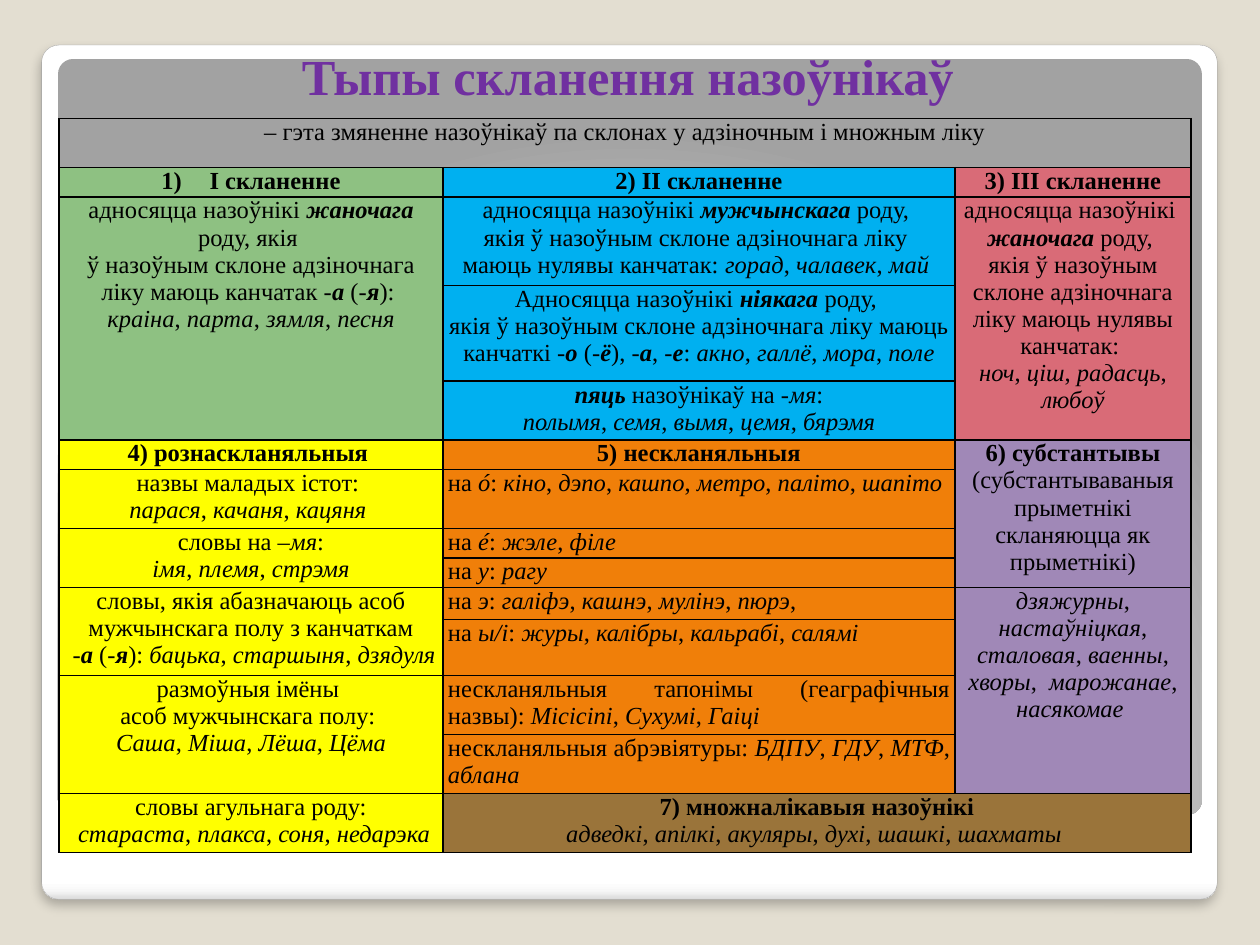
from dataclasses import dataclass
from itertools import groupby
from typing import Iterator, Optional

from lxml.etree import SubElement
from pptx import Presentation
from pptx.dml.color import RGBColor
from pptx.enum.shapes import MSO_SHAPE
from pptx.enum.text import PP_ALIGN
from pptx.oxml import parse_xml
from pptx.oxml.ns import nsdecls, qn
from pptx.util import Cm, Pt

FONT = "Times New Roman"
BLACK = RGBColor(0x00, 0x00, 0x00)
PURPLE = RGBColor(0x70, 0x30, 0xA0)
BEIGE = RGBColor(0xE3, 0xDE, 0xD1)
EDGE = RGBColor(0xA4, 0xA4, 0xA4)
GREEN = RGBColor(0x8E, 0xC1, 0x82)
BLUE = RGBColor(0x00, 0xB0, 0xF0)
RED = RGBColor(0xD9, 0x6B, 0x77)
YELLOW = RGBColor(0xFF, 0xFF, 0x00)
ORANGE = RGBColor(0xF0, 0x7F, 0x09)
VIOLET = RGBColor(0xA0, 0x88, 0xB7)
BROWN = RGBColor(0x9A, 0x74, 0x3A)

HANGING = Cm(0.97)
COLUMN_WIDTHS = (7.74, 10.32, 4.76)
ROW_HEIGHTS = (0.99, 0.54, 1.64, 1.93, 1.09, 0.54, 1.09, 0.54, 0.54,
               0.65, 0.99, 1.09, 1.09, 1.1)


@dataclass(frozen=True)
class Entry:
    """A table cell: in its lines * toggles bold, _ italic, # opens a heading and 1) numbers it."""
    row: int
    column: int
    fill: Optional[RGBColor]
    lines: tuple[str, ...]
    rows: int = 1
    columns: int = 1
    align: PP_ALIGN = PP_ALIGN.CENTER


@dataclass(frozen=True)
class Panel:
    """A rounded background panel with its gradient stops and direction."""
    left: float
    top: float
    width: float
    height: float
    stops: tuple[tuple[int, str], ...]
    direction: str


PANELS = (
    Panel(0.84, 0.91, 23.7, 17.22,
          ((0, "FFFFFF"), (98, "FFFFFF"), (99, "F7F7F7"), (100, "DADADA")),
          '<a:lin ang="5400000" scaled="0"/>'),
    Panel(1.17, 1.19, 23.06, 15.24,
          ((0, "FFFFFF"), (55, "E1E1E1"), (100, "A2A2A2")),
          '<a:path path="circle"><a:fillToRect l="50000" t="175000" r="50000" b="-75000"/></a:path>'),
)

ENTRIES = (
    Entry(0, 0, None, ("– гэта змяненне назоўнікаў па склонах у адзіночным і множным ліку",), columns=3),
    Entry(1, 0, GREEN, ("#1)І скланенне",)),
    Entry(1, 1, BLUE, ("#2) ІІ скланенне",)),
    Entry(1, 2, RED, ("#3) ІІІ скланенне",)),
    Entry(2, 0, GREEN, ("адносяцца назоўнікі *_жаночага_* роду, якія ",
                        "ў назоўным склоне адзіночнага ліку маюць канчатак -*_а_* (-*_я_*): ",
                        "_краіна, парта, зямля, песня_"), rows=3),
    Entry(2, 1, BLUE, ("адносяцца назоўнікі *_мужчынскага_* роду, ",
                       "якія ў назоўным склоне адзіночнага ліку ",
                       "маюць нулявы канчатак: _горад, чалавек, май _")),
    Entry(2, 2, RED, ("адносяцца назоўнікі ", "*_жаночага_* роду, ",
                      "якія ў назоўным склоне адзіночнага ліку маюць нулявы канчатак: ",
                      "_ноч, ціш, радасць, любоў_"), rows=3),
    Entry(3, 1, BLUE, ("Адносяцца назоўнікі *_ніякага_* роду, ",
                       "якія ў назоўным склоне адзіночнага ліку маюць канчаткі "
                       "-*_о_* (-*_ё_*), -*_а_*, -*_е_*: _акно, галлё, мора, поле_")),
    Entry(4, 1, BLUE, ("*_пяць_* назоўнікаў на -_мя_:", "_полымя, семя, вымя, цемя, бярэмя_")),
    Entry(5, 0, YELLOW, ("#4) рознаскланяльныя ",)),
    Entry(5, 1, ORANGE, ("#5) нескланяльныя",)),
    Entry(5, 2, VIOLET, ("#6) субстантывы",
                         "(субстантываваныя прыметнікі скланяюцца як прыметнікі)"), rows=4),
    Entry(6, 0, YELLOW, ("назвы маладых істот: ", "_парася, качаня, кацяня _")),
    Entry(6, 1, ORANGE, ("на _ó_: _кіно, дэпо, кашпо, метро, паліто, шапіто _",), align=PP_ALIGN.JUSTIFY),
    Entry(7, 0, YELLOW, ("словы на –_мя_:", "_імя, племя, стрэмя_"), rows=2),
    Entry(7, 1, ORANGE, ("на _é_: _жэле, філе_",), align=PP_ALIGN.JUSTIFY),
    Entry(8, 1, ORANGE, ("на _у_: _рагу_",), align=PP_ALIGN.JUSTIFY),
    Entry(9, 0, YELLOW, ("словы, якія абазначаюць асоб мужчынскага полу з канчаткам",
                         " -*_а_* (-*_я_*): _бацька, старшыня, дзядуля_"), rows=2),
    Entry(9, 1, ORANGE, ("на _э_: _галіфэ, кашнэ, мулінэ, пюрэ,_",), align=PP_ALIGN.JUSTIFY),
    Entry(9, 2, VIOLET, ("_дзяжурны, настаўніцкая, сталовая, ваенны, хворы,  марожанае, насякомае _",), rows=4),
    Entry(10, 1, ORANGE, ("на _ы/і_: _журы, калібры, кальрабі, салямі_",), align=PP_ALIGN.JUSTIFY),
    Entry(11, 0, YELLOW, ("размоўныя імёны ", "асоб мужчынскага полу: ",
                          "_Саша, Міша, Лёша, Цёма_"), rows=2),
    Entry(11, 1, ORANGE, ("нескланяльныя тапонімы (геаграфічныя назвы): _Місісіпі, Сухумі, Гаіці_",),
          align=PP_ALIGN.JUSTIFY),
    Entry(12, 1, ORANGE, ("нескланяльныя абрэвіятуры: _БДПУ, ГДУ, МТФ, аблана_",), align=PP_ALIGN.JUSTIFY),
    Entry(13, 0, YELLOW, ("словы агульнага роду:", "_ стараста, плакса, соня, недарэка_")),
    Entry(13, 1, BROWN, ("#7) множналікавыя назоўнікі",
                         "_адведкі, апілкі, акуляры, духі, шашкі, шахматы _"), columns=2),
)


def styled_runs(line: str) -> Iterator[tuple[str, bool, bool]]:
    """Yield text, bold and italic for each run, keeping commas upright."""
    bold = italic = False
    letters = []
    for letter in line:
        if letter == "*":
            bold = not bold
        elif letter == "_":
            italic = not italic
        else:
            letters.append((letter, bold, italic and letter != ","))
    for style, group in groupby(letters, key=lambda item: item[1:]):
        yield "".join(item[0] for item in group), *style


def set_font(paragraph, size: float, color: RGBColor) -> None:
    """Set the shared typeface, size and colour of a paragraph."""
    paragraph.font.name = FONT
    paragraph.font.size = Pt(size)
    paragraph.font.color.rgb = color


def write_line(paragraph, line: str, align: PP_ALIGN) -> None:
    """Write one marked-up line into a paragraph."""
    heading = line.startswith("#")
    line = line.removeprefix("#")
    paragraph.alignment = align
    if heading:
        properties = paragraph._p.get_or_add_pPr()
        properties.set("marL", str(HANGING))
        properties.set("indent", str(-HANGING))
        if line.startswith("1)"):
            line = line.removeprefix("1)")
            SubElement(properties, qn("a:buFont"), typeface="+mj-lt")
            SubElement(properties, qn("a:buAutoNum"), type="arabicParenR")
    set_font(paragraph, 14, BLACK)
    for text, bold, italic in styled_runs(line):
        run = paragraph.add_run()
        run.text = text
        run.font.bold = heading or bold
        run.font.italic = italic


def set_borders(cell) -> None:
    """Give a cell thin black borders on all sides."""
    properties = cell._tc.get_or_add_tcPr()
    for index, side in enumerate("LRTB"):
        properties.insert(index, parse_xml(
            f'<a:ln{side} {nsdecls("a")} w="12700"><a:solidFill>'
            f'<a:srgbClr val="{BLACK}"/></a:solidFill></a:ln{side}>'))


def fill_entry(table, entry: Entry) -> None:
    """Merge, colour and write one table entry."""
    cell = table.cell(entry.row, entry.column)
    if entry.rows * entry.columns > 1:
        cell.merge(table.cell(entry.row + entry.rows - 1, entry.column + entry.columns - 1))
    if entry.fill is None:
        cell.fill.background()
    else:
        cell.fill.solid()
        cell.fill.fore_color.rgb = entry.fill
    frame = cell.text_frame
    for index, line in enumerate(entry.lines):
        paragraph = frame.add_paragraph() if index else frame.paragraphs[0]
        write_line(paragraph, line, entry.align)


def add_panel(slide, panel: Panel):
    """Draw a rounded panel with its gradient."""
    shape = slide.shapes.add_shape(MSO_SHAPE.ROUNDED_RECTANGLE, Cm(panel.left), Cm(panel.top),
                                   Cm(panel.width), Cm(panel.height))
    shape.adjustments[0] = 0.02
    shape.shadow.inherit = False
    shape.line.fill.background()
    stops = "".join(f'<a:gs pos="{position * 1000}"><a:srgbClr val="{color}"/></a:gs>'
                    for position, color in panel.stops)
    shape._element.spPr.insert(2, parse_xml(
        f'<a:gradFill {nsdecls("a")} rotWithShape="1"><a:gsLst>{stops}</a:gsLst>'
        f'{panel.direction}</a:gradFill>'))
    return shape


def add_title(slide, text: str) -> None:
    """Place the slide title."""
    frame = slide.shapes.add_textbox(Cm(1.19), Cm(0.91), Cm(22.94), Cm(1.17)).text_frame
    frame.word_wrap = True
    frame.margin_top = frame.margin_bottom = 0
    paragraph = frame.paragraphs[0]
    paragraph.text = text
    paragraph.alignment = PP_ALIGN.CENTER
    set_font(paragraph, 28.8, PURPLE)
    paragraph.font.bold = True


def add_declensions(slide) -> None:
    """Build the table of declension types."""
    table = slide.shapes.add_table(len(ROW_HEIGHTS), len(COLUMN_WIDTHS), Cm(1.19), Cm(2.39),
                                   Cm(sum(COLUMN_WIDTHS)), Cm(sum(ROW_HEIGHTS))).table
    table.first_row = table.horz_banding = False
    for column, width in zip(table.columns, COLUMN_WIDTHS):
        column.width = Cm(width)
    for row, height in zip(table.rows, ROW_HEIGHTS):
        row.height = Cm(height)
    for cell in table.iter_cells():
        cell.margin_left = cell.margin_right = Cm(0.1)
        cell.margin_top = cell.margin_bottom = 0
        set_borders(cell)
        set_font(cell.text_frame.paragraphs[0], 14, BLACK)
    for entry in ENTRIES:
        fill_entry(table, entry)


def main() -> None:
    """Build and save the slide."""
    presentation = Presentation()
    presentation.slide_width, presentation.slide_height = Cm(25.4), Cm(19.05)
    slide = presentation.slides.add_slide(presentation.slide_layouts[6])
    slide.background.fill.solid()
    slide.background.fill.fore_color.rgb = BEIGE
    card, _ = [add_panel(slide, panel) for panel in PANELS]
    card.line.color.rgb = EDGE
    card.line.width = Pt(0.16)
    card._element.spPr.find(qn("a:effectLst")).append(parse_xml(
        f'<a:outerShdw {nsdecls("a")} blurRad="76200" dist="50800" dir="5400000" algn="tl">'
        '<a:srgbClr val="000000"><a:alpha val="25000"/></a:srgbClr></a:outerShdw>'))
    add_title(slide, "Тыпы скланення назоўнікаў")
    add_declensions(slide)
    presentation.save("out.pptx")


if __name__ == "__main__":
    main()
